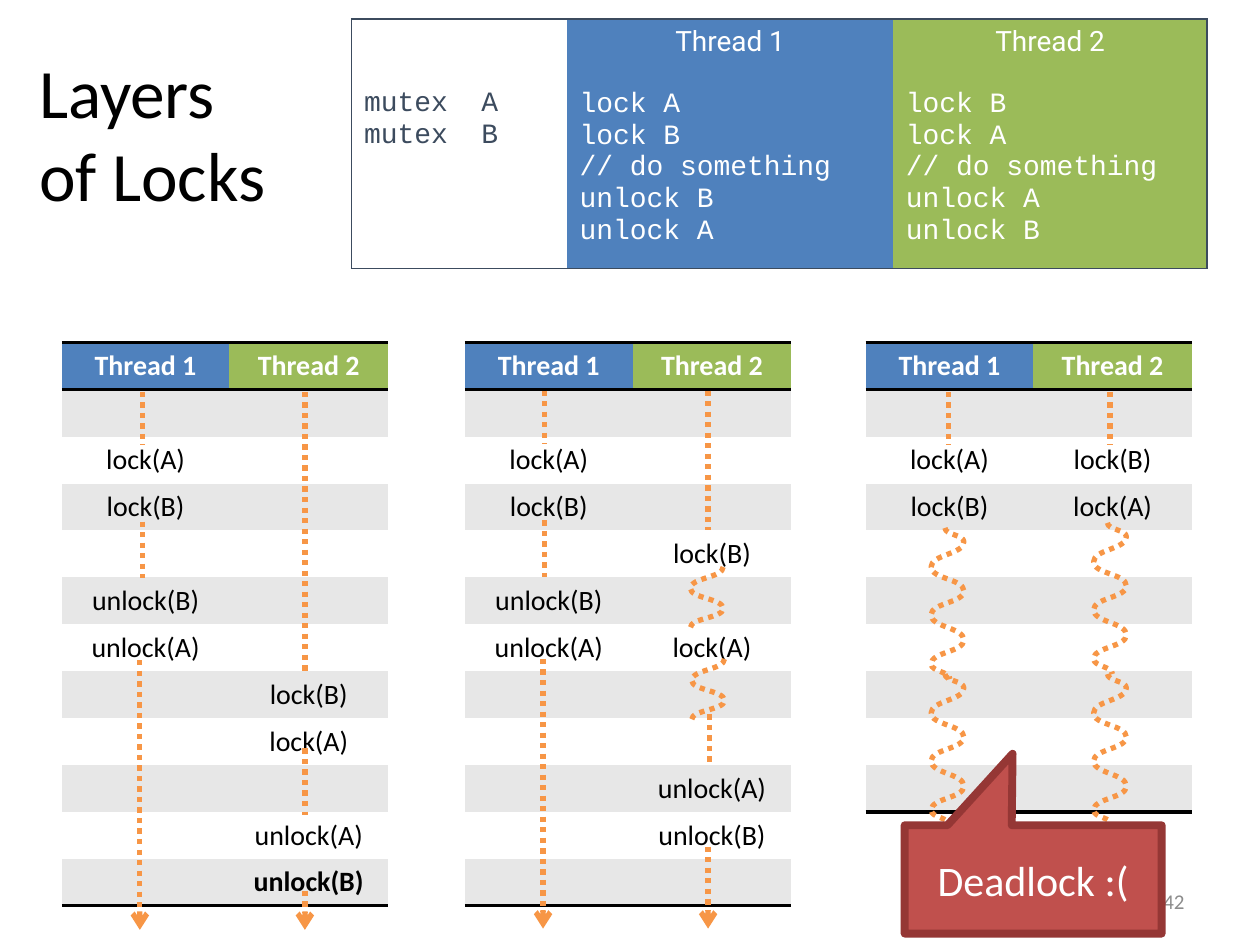
from copy import deepcopy

from lxml.etree import SubElement
from pptx import Presentation
from pptx.dml.color import RGBColor
from pptx.enum.dml import MSO_LINE as Dash
from pptx.enum.shapes import MSO_CONNECTOR as Conn, MSO_SHAPE as Shape
from pptx.enum.text import MSO_ANCHOR as Anchor, PP_ALIGN as Align
from pptx.oxml.ns import qn
from pptx.util import Inches, Pt

BLACK = RGBColor(0x00, 0x00, 0x00)
WHITE = RGBColor(0xFF, 0xFF, 0xFF)
GRAY = RGBColor(0x8C, 0x8C, 0x8C)
BAND = RGBColor(0xE7, 0xE7, 0xE7)
SLATE = RGBColor(0x3C, 0x4B, 0x5E)
BLUE = RGBColor(0x4F, 0x81, 0xBD)
GREEN = RGBColor(0x9B, 0xBB, 0x59)
ORANGE = RGBColor(0xF7, 0x96, 0x46)
RED = RGBColor(0xC0, 0x50, 0x4D)
MAROON = RGBColor(0x95, 0x37, 0x35)

PLAIN = "{2D5ABB26-0587-4C30-8999-92F81FD0307C}"  # table style: no style, no grid
TOP = 2.72
ROW = 4.47 / 12
SWING = 0.13
SHORT = [(SWING, 0), (-SWING, 0.17), (SWING, 0.33), (-SWING, 0.48)]
LONG = [(-0.02, 0), (SWING, 0.11), (-SWING, 0.31), (SWING, 0.5),
        (-SWING, 0.69), (SWING, 0.89), (-SWING, 1.08), (0.02, 1.2)]

# width, fill, ink, heading, paragraphs of code, bordered sides
CODE = [
    (1.71, WHITE, SLATE, None, ["mutex  A\nmutex  B"], "LTB"),
    (2.59, BLUE, WHITE, "Thread 1",
     ["lock A\nlock B\n// do something\nunlock B\nunlock A"], "TB"),
    (2.49, GREEN, WHITE, "Thread 2",
     ["lock B\nlock A\n// do something", "unlock A\nunlock B"], "RTB"),
]

FIRST = {2: "lock(A)", 3: "lock(B)", 5: "unlock(B)", 6: "unlock(A)"}
# left, rows, calls by row per thread, lines (x, from, to, arrow), waves (x, top, turns)
RUNS = [
    (0.49, 12,
     [FIRST, {7: "lock(B)", 8: "lock(A)", 10: "unlock(A)", 11: "unlock(B)"}],
     [(1.11, 5.24, 7.38, True), (2.42, 7.07, 7.38, True), (2.42, 3.11, 5.33, False),
      (1.13, 3.11, 3.53, False), (1.13, 4.14, 4.59, False), (2.42, 5.94, 6.47, False)],
     []),
    (3.69, 12,
     [FIRST, {4: "lock(B)", 6: "lock(A)", 9: "unlock(A)", 10: "unlock(B)"}],
     [(4.31, 5.23, 7.37, True), (5.62, 6.72, 7.37, True), (5.62, 3.1, 4.21, False),
      (4.32, 3.1, 3.52, False), (4.32, 4.13, 4.58, False), (5.63, 5.67, 6.08, False)],
     [(5.61, 4.5, SHORT), (5.62, 5.23, SHORT)]),
    (6.87, 10,
     [{2: "lock(A)", 3: "lock(B)"}, {2: "lock(B)", 3: "lock(A)"}],
     [(7.53, 3.11, 3.53, False), (8.81, 3.11, 3.53, False)],
     [(7.52, 4.19, LONG), (7.52, 5.35, LONG), (8.81, 4.15, LONG), (8.81, 5.35, LONG)]),
]


def write(para, text, size, color, face="Calibri", bold=False, align=Align.LEFT):
    """Add one run per line, with line breaks of the same font between them."""
    para.alignment = align
    run = None
    for line in text.split("\n"):
        if run is not None:
            para.add_line_break()
            para._p[-1].append(deepcopy(run._r.rPr))
        run = para.add_run()
        run.text = line
        font = run.font
        font.name, font.size, font.bold = face, Pt(size), bold
        font.color.rgb = color


def edge(cell, sides, color, width):
    """Draw cell borders; sides must keep the order L, R, T, B."""
    props = cell._tc.get_or_add_tcPr()
    for side in sides:
        line = SubElement(props, qn("a:ln" + side), w=str(Pt(width)))
        fill = SubElement(line, qn("a:solidFill"))
        SubElement(fill, qn("a:srgbClr"), val=str(color))


def paint(cell, color):
    cell.fill.solid()
    cell.fill.fore_color.rgb = color


def add_grid(slide, rows, left, top, widths, height):
    frame = slide.shapes.add_table(rows, len(widths), Inches(left), Inches(top),
                                   Inches(sum(widths)), Inches(height))
    table = frame.table
    table.first_row = table.horz_banding = False
    table._tbl.tblPr.find(qn("a:tableStyleId")).text = PLAIN
    for col, width in zip(table.columns, widths):
        col.width = Inches(width)
    return table


def add_title(slide):
    title = slide.shapes.title
    title.left, title.top = Inches(0.21), Inches(0.31)
    title.width, title.height = Inches(9), Inches(1.48)
    title.text_frame.vertical_anchor = Anchor.MIDDLE
    write(title.text_frame.paragraphs[0], "Layers\nof Locks", 39.6, BLACK)


def add_number(slide):
    box = slide.shapes.add_textbox(Inches(7.17), Inches(6.95), Inches(2.33), Inches(0.4))
    frame = box.text_frame
    frame.word_wrap = True
    frame.vertical_anchor = Anchor.MIDDLE
    write(frame.paragraphs[0], "42", 12, GRAY, align=Align.RIGHT)


def add_code(slide):
    table = add_grid(slide, 1, 2.79, 0.15, [item[0] for item in CODE], 1.98)
    for cell, (_, fill, ink, head, parts, sides) in zip(table.rows[0].cells, CODE):
        edge(cell, sides, SLATE, 1)
        paint(cell, fill)
        frame = cell.text_frame
        para = frame.paragraphs[0]
        if head:
            write(para, head, 16, ink, "Roboto", align=Align.CENTER)
            para = frame.add_paragraph()
            para.space_before = Pt(18)
        else:
            cell.margin_top = Inches(0.55)
        for i, part in enumerate(parts):
            if i:
                para = frame.add_paragraph()
            write(para, part, 16, ink, "Courier New")


def add_calls(slide, left, count, calls):
    table = add_grid(slide, count, left, TOP, (1.33, 1.26), count * ROW)
    last = count - 1
    for r in range(count):
        for c, fill in enumerate((BLUE, GREEN)):
            cell = table.cell(r, c)
            cell.margin_top = cell.margin_bottom = 0
            cell.vertical_anchor = Anchor.MIDDLE
            edge(cell, "TB" if r == 0 else "B" if r == last else "", BLACK, 2)
            paint(cell, fill if r == 0 else BAND if r % 2 else WHITE)
            text = calls[c].get(r) if r else f"Thread {c + 1}"
            if text:
                write(cell.text_frame.paragraphs[0], text, 16, BLACK if r else WHITE,
                      bold=r in (0, last), align=Align.CENTER)


def dot(line):
    line.color.rgb = ORANGE
    line.width = Pt(3)
    line.dash_style = Dash.ROUND_DOT


def add_line(slide, x, start, end, arrow):
    line = slide.shapes.add_connector(Conn.STRAIGHT, Inches(x), Inches(start),
                                      Inches(x), Inches(end))
    dot(line.line)
    props = line._element.spPr
    if arrow:
        SubElement(props.find(qn("a:ln")), qn("a:tailEnd"), type="arrow")
    SubElement(props, qn("a:effectLst"))


def bend(shape):
    """Turn the straight segments of a freeform into curves with upright ends."""
    track = next(shape._element.iter(qn("a:lnTo"))).getparent()
    spots = [(int(pt.get("x")), int(pt.get("y"))) for pt in track.iter(qn("a:pt"))]
    for seg in track.findall(qn("a:lnTo")):
        track.remove(seg)
    for (x1, y1), (x2, y2) in zip(spots, spots[1:]):
        mid = (y1 + y2) // 2
        curve = SubElement(track, qn("a:cubicBezTo"))
        for x, y in ((x1, mid), (x2, mid), (x2, y2)):
            SubElement(curve, qn("a:pt"), x=str(x), y=str(y))


def add_wave(slide, x, y, turns):
    """Draw a wave through the turning points, given relative to (x, y)."""
    spots = [(Inches(x + dx), Inches(y + dy)) for dx, dy in turns]
    maker = slide.shapes.build_freeform(*spots[0])
    maker.add_line_segments(spots[1:], close=False)
    wave = maker.convert_to_shape()
    bend(wave)
    wave.shadow.inherit = False
    wave.fill.background()
    dot(wave.line)


def add_callout(slide):
    box = slide.shapes.add_shape(Shape.RECTANGULAR_CALLOUT, Inches(7.18), Inches(6.55),
                                 Inches(2.04), Inches(0.86))
    box.adjustments[0], box.adjustments[1] = -0.08, -1.16
    box.shadow.inherit = False
    box.fill.solid()
    box.fill.fore_color.rgb = RED
    box.line.color.rgb = MAROON
    box.line.width = Pt(4.5)
    box.text_frame.vertical_anchor = Anchor.MIDDLE
    write(box.text_frame.paragraphs[0], "Deadlock :(", 24, WHITE, align=Align.CENTER)


def main():
    deck = Presentation()
    deck.slide_width, deck.slide_height = Inches(10), Inches(7.5)
    slide = deck.slides.add_slide(deck.slide_layouts[5])
    add_title(slide)
    add_number(slide)
    add_code(slide)
    for left, count, calls, lines, waves in RUNS:
        add_calls(slide, left, count, calls)
        for line in lines:
            add_line(slide, *line)
        for wave in waves:
            add_wave(slide, *wave)
    add_callout(slide)
    deck.save("out.pptx")


if __name__ == "__main__":
    main()
